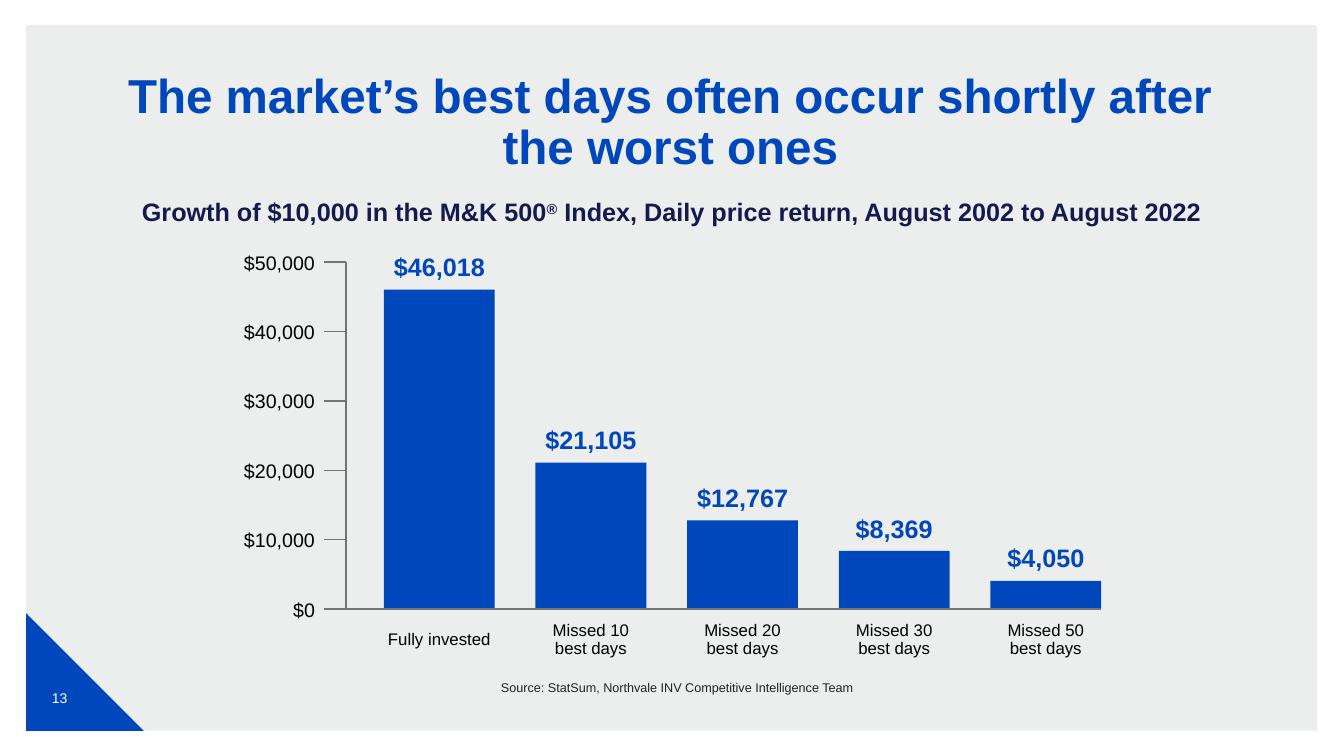
from dataclasses import dataclass

from lxml.etree import SubElement
from pptx import Presentation
from pptx.dml.color import RGBColor
from pptx.enum.shapes import MSO_CONNECTOR as Connector
from pptx.enum.shapes import MSO_SHAPE as Preset
from pptx.enum.text import MSO_ANCHOR as Anchor
from pptx.enum.text import PP_ALIGN as Align
from pptx.oxml.ns import qn
from pptx.util import Inches, Pt


@dataclass(frozen=True)
class Theme:
    font: str = "Arial"
    blue: str = "0047BB"
    navy: str = "141A4D"
    panel: str = "D0D3D4"
    panel_alpha: int = 40
    axis: str = "747478"
    black: str = "000000"
    source: str = "222222"
    white: str = "FFFFFF"
    title_size: int = 34
    heading_size: int = 18
    axis_size: int = 14
    category_size: int = 12
    number_size: int = 10
    source_size: int = 9


THEME = Theme()
WIDTH, HEIGHT = Inches(13.33), Inches(7.5)
COLUMNS, ROWS = 160, 90

GROWTH = {
    "Fully invested": 46018,
    "Missed 10 best days": 21105,
    "Missed 20 best days": 12767,
    "Missed 30 best days": 8369,
    "Missed 50 best days": 4050,
}
SCALE_TOP, SCALE_STEP = 50000, 10000


def to_point(column, row):
    return int(column * WIDTH / COLUMNS), int(row * HEIGHT / ROWS)


@dataclass(frozen=True)
class Box:
    """Left, top, width and height in grid columns and rows."""
    left: float
    top: float
    width: float
    height: float

    def inner(self, left, top, width, height):
        return Box(self.left + left, self.top + top, width, height)

    def place(self):
        return (*to_point(self.left, self.top),
                *to_point(self.width, self.height))


def style_font(font, size, color, bold=False):
    font.name = THEME.font
    font.size = Pt(size)
    font.bold = bold
    font.color.rgb = RGBColor.from_string(color)


def add_filled(slide, preset, box, color):
    shape = slide.shapes.add_shape(preset, *box.place())
    shape.shadow.inherit = False
    shape.fill.solid()
    shape.fill.fore_color.rgb = RGBColor.from_string(color)
    shape.line.fill.background()
    return shape


def add_line(slide, start, end):
    line = slide.shapes.add_connector(
        Connector.STRAIGHT, *to_point(*start), *to_point(*end))
    line.line.color.rgb = RGBColor.from_string(THEME.axis)
    line.line.width = Pt(1)
    SubElement(line._element.spPr, qn("a:effectLst"))


def add_text(slide, box, text, size, color, bold=False, spacing=0.9,
             side_inset=0, anchor=Anchor.TOP, align=Align.CENTER):
    frame = slide.shapes.add_textbox(*box.place()).text_frame
    frame.word_wrap = True
    frame.vertical_anchor = anchor
    frame.margin_left = frame.margin_right = Inches(side_inset)
    frame.text = text
    paragraph = frame.paragraphs[0]
    paragraph.alignment = align
    paragraph.line_spacing = spacing
    style_font(paragraph.runs[0].font, size, color, bold)
    return paragraph


def add_page(slide, box):
    # Tinted panel
    panel = add_filled(slide, Preset.RECTANGLE, box, THEME.panel)
    color = panel.fill._xPr.find(qn("a:solidFill"))[0]
    SubElement(color, qn("a:alpha")).set("val", str(THEME.panel_alpha * 1000))
    # Corner with page number
    corner = box.inner(0, box.height - 14, 14, 14)
    add_filled(slide, Preset.RIGHT_TRIANGLE, corner, THEME.blue)
    add_text(slide, corner.inner(0.7, 6.6, 6.6, 7), "13", THEME.number_size,
             THEME.white, spacing=1, side_inset=0.1, anchor=Anchor.MIDDLE)


def add_header(slide, box):
    add_text(slide, box.inner(1.6, 0, 132, 12),
             "The market’s best days often occur shortly after the worst ones",
             THEME.title_size, THEME.blue, bold=True)
    subtitle = add_text(slide, box.inner(0, 15.2, box.width, 4.4),
                        "Growth of $10,000 in the M&K 500",
                        THEME.heading_size, THEME.navy, bold=True)
    period = " Index, Daily price return, August 2002 to August 2022"
    for text, baseline in (("®", 30000), (period, 0)):
        run = subtitle.add_run()
        run.text = text
        style_font(run.font, THEME.heading_size, THEME.navy, bold=True)
        run.font._element.set("baseline", str(baseline))


def add_columns(slide, box):
    """One column per case; the box is the full height of the scale."""
    bar_width, label_height = 13.2, 4.7
    pitch = (box.width - bar_width) / (len(GROWTH) - 1)
    for index, (case, value) in enumerate(GROWTH.items()):
        left = index * pitch
        height = box.height * value / SCALE_TOP
        top = box.height - height
        add_filled(slide, Preset.RECTANGLE,
                   box.inner(left, top, bar_width, height), THEME.blue)
        add_text(slide, box.inner(left, top - label_height - 0.3,
                                  bar_width, label_height),
                 f"${value:,}", THEME.heading_size, THEME.blue, bold=True,
                 anchor=Anchor.BOTTOM)
        add_text(slide, box.inner(left, box.height + 1.3,
                                  bar_width, label_height),
                 case, THEME.category_size, THEME.black, anchor=Anchor.MIDDLE)


def add_axes(slide, box):
    """Value scale on the left and a base line along the whole box."""
    label_width, label_height, tick_left, axis_left = 19.1, 4.7, 20.2, 22.8
    bottom = box.top + box.height
    tick, axis = box.left + tick_left, box.left + axis_left
    for value in range(0, SCALE_TOP + 1, SCALE_STEP):
        offset = box.height * (1 - value / SCALE_TOP)
        add_text(slide, box.inner(0, offset + 0.2 - label_height / 2,
                                  label_width, label_height),
                 f"${value:,}", THEME.axis_size, THEME.black,
                 anchor=Anchor.MIDDLE, align=Align.RIGHT)
        end = axis if value else box.left + box.width
        add_line(slide, (end, box.top + offset), (tick, box.top + offset))
    add_line(slide, (axis, bottom), (axis, box.top))


def add_growth_chart(slide, box):
    columns_left = 27.3
    add_columns(slide, box.inner(columns_left, 0, box.width - columns_left,
                                 box.height))
    add_axes(slide, box)


def add_source(slide, box):
    add_text(slide, box,
             "Source: StatSum, Northvale INV Competitive Intelligence Team",
             THEME.source_size, THEME.source, spacing=1, side_inset=0.1)


def main():
    presentation = Presentation()
    presentation.slide_width, presentation.slide_height = WIDTH, HEIGHT
    slide = presentation.slides.add_slide(presentation.slide_layouts[6])
    add_page(slide, Box(3.1, 3, 153.7, 84))
    add_header(slide, Box(12.2, 8, 135.5, 20))
    add_growth_chart(slide, Box(18.4, 31.2, 112.7, 41.3))
    add_source(slide, Box(29, 80.4, 103.2, 3))
    presentation.save("out.pptx")


if __name__ == "__main__":
    main()
